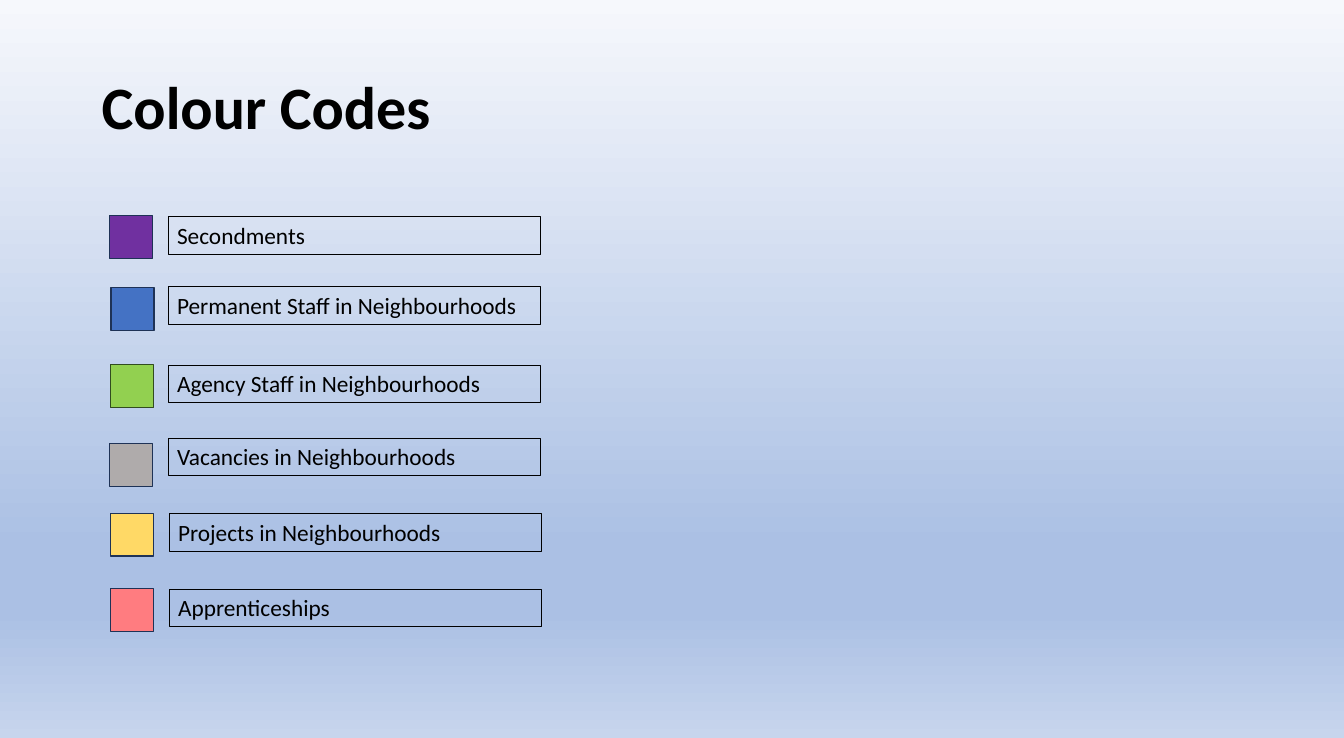
from copy import deepcopy

from pptx import Presentation
from pptx.dml.color import RGBColor
from pptx.enum import shapes, text
from pptx.oxml.ns import qn
from pptx.util import Pt


def rgb(hex_code):
    return RGBColor.from_string(hex_code)


def add_box(x, y, w, h, fill, line, line_width):
    """Add a rectangle without shadow; a fill of None leaves it open."""
    sp = s.shapes.add_shape(shapes.MSO_SHAPE.RECTANGLE, Pt(x), Pt(y), Pt(w), Pt(h))
    sp.shadow.inherit = False
    if fill:
        sp.fill.solid()
        sp.fill.fore_color.rgb = rgb(fill)
    else:
        sp.fill.background()
    sp.line.color.rgb = rgb(line)
    sp.line.width = Pt(line_width)
    return sp


prs = Presentation()
prs.slide_width, prs.slide_height = Pt(1037.5), Pt(569.5)
s = prs.slides.add_slide(prs.slide_layouts[5])

# Background gradient, top to bottom
bg = s.background.fill
bg.gradient()
bg.gradient_angle = 270
stops = s.element.find(".//" + qn("a:gsLst"))
for _ in range(2):
    stops.append(deepcopy(stops[0]))
gradient = [(0, "F6F8FC"), (0.74, "ABC0E4"), (0.83, "ABC0E4"), (1, "C7D5ED")]
for stop, (position, colour) in zip(bg.gradient_stops, gradient):
    stop.position = position
    stop.color.rgb = rgb(colour)

# Title
title = s.shapes.title
title.left, title.top, title.width, title.height = Pt(71.3), Pt(30.2), Pt(895), Pt(110)
tf = title.text_frame
tf.text = "Colour Codes"
tf.vertical_anchor = text.MSO_ANCHOR.MIDDLE
p = tf.paragraphs[0]
p.alignment = text.PP_ALIGN.LEFT
p.line_spacing = 0.9
font = p.runs[0].font
font.name, font.size, font.bold = "Calibri", Pt(46.4), True
font.color.rgb = rgb("000000")

# Legend: label, swatch fill, swatch line, swatch x and y, label x and y
NAVY, GREEN = "1E3256", "314C1F"
legend = [
    ("Secondments", "7030A0", NAVY, 84.6, 166.3, 129.6, 167),
    ("Permanent Staff in Neighbourhoods", "4472C4", NAVY, 85.7, 221.6, 129.6, 221.2),
    ("Agency Staff in Neighbourhoods", "92D050", GREEN, 85.5, 281.5, 129.6, 281.7),
    ("Vacancies in Neighbourhoods", "AFABAB", NAVY, 84.6, 342, 129.6, 337.8),
    ("Projects in Neighbourhoods", "FFD966", NAVY, 85.5, 396, 130.4, 396),
    ("Apprenticeships", "FF7C80", NAVY, 85.5, 454.2, 130.4, 454.5),
]
for name, fill, line, swatch_x, swatch_y, label_x, label_y in legend:
    add_box(swatch_x, swatch_y, 33.2, 33.2, fill, line, 1)
    tf = add_box(label_x, label_y, 287.3, 29, None, "000000", 0.25).text_frame
    tf.text = name
    tf.word_wrap = True
    tf.auto_size = text.MSO_AUTO_SIZE.SHAPE_TO_FIT_TEXT
    tf.vertical_anchor = text.MSO_ANCHOR.TOP
    p = tf.paragraphs[0]
    p.alignment = text.PP_ALIGN.LEFT
    font = p.runs[0].font
    font.name, font.size = "Calibri", Pt(18)
    font.color.rgb = rgb("000000")

prs.save("out.pptx")
